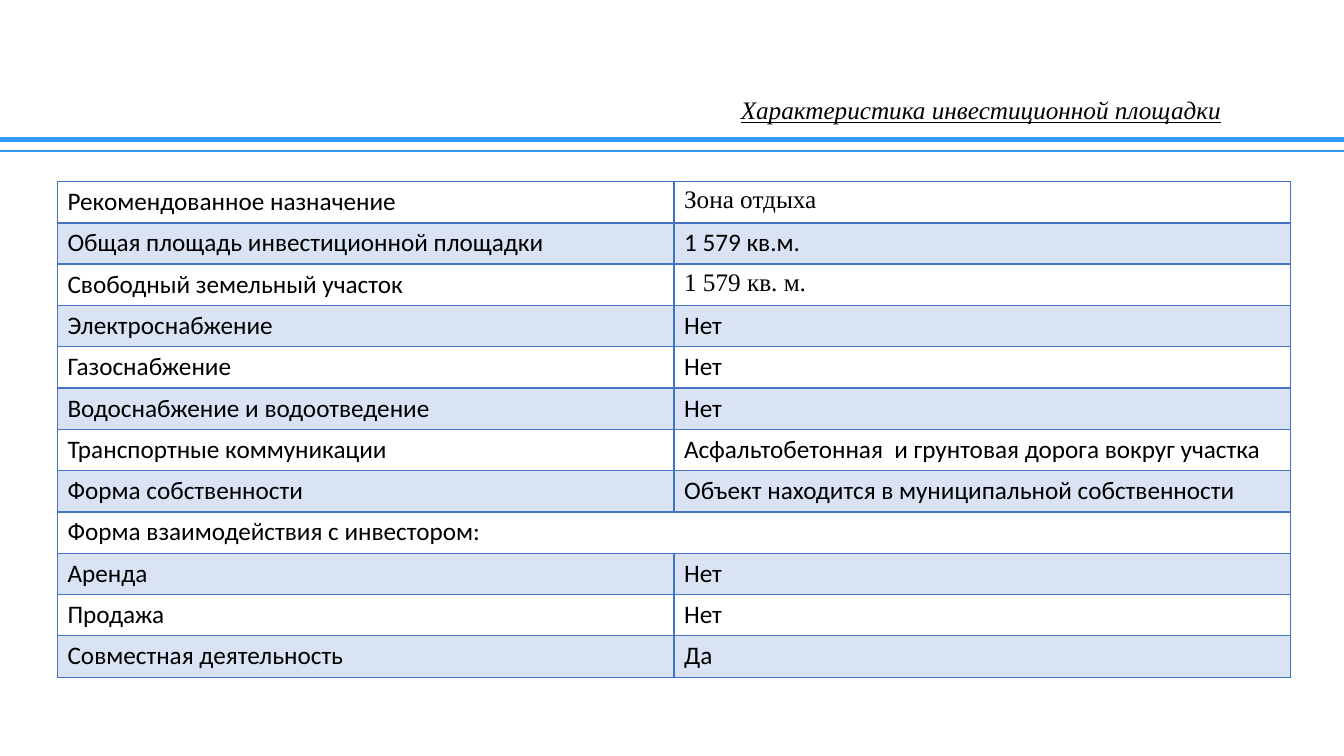
import pptx
import pptx.util
import pptx.dml.color
import pptx.enum.shapes
import pptx.enum.text
import pptx.oxml
import pptx.oxml.ns
import lxml.etree

Inches = pptx.util.Inches
BORDER = "4472C4"
BAND = "DAE3F3"
RULE = "3399FF"
SERIF = "Times New Roman"
SANS = "Calibri"


def color(hex_code):
    return pptx.dml.color.RGBColor.from_string(hex_code)


def write(frame, text, font=SANS, size=18, italic=False, underline=False, align="LEFT", spacing=1.0):
    paragraph = frame.paragraphs[0]
    paragraph.alignment = getattr(pptx.enum.text.PP_ALIGN, align)
    paragraph.line_spacing = spacing
    run = paragraph.add_run()
    run.text = text
    run.font.name = font
    run.font.size = pptx.util.Pt(size)
    run.font.bold = False
    run.font.italic = italic
    run.font.underline = underline
    run.font.color.rgb = color("000000")


presentation = pptx.Presentation()
presentation.slide_width = Inches(13.33)
presentation.slide_height = Inches(7.5)
slide = presentation.slides.add_slide(presentation.slide_layouts[6])

for top, width in [(1.38, 3.5), (1.5, 1.5)]:
    rule = slide.shapes.add_connector(
        pptx.enum.shapes.MSO_CONNECTOR.STRAIGHT, 0, Inches(top), presentation.slide_width, Inches(top))
    rule.line.color.rgb = color(RULE)
    rule.line.width = pptx.util.Pt(width)
    lxml.etree.SubElement(rule._element.spPr, pptx.oxml.ns.qn("a:effectLst"))

title = slide.shapes.add_textbox(presentation.slide_width // 2, Inches(0.97), Inches(6.13), Inches(0.27))
title.text_frame.word_wrap = True
title.text_frame.vertical_anchor = pptx.enum.text.MSO_ANCHOR.MIDDLE
write(title.text_frame, "Характеристика инвестиционной площадки",
      font=SERIF, italic=True, underline=True, align="CENTER", spacing=0.9)

rows = [
    ("Рекомендованное назначение", "Зона отдыха", SERIF),
    ("Общая площадь инвестиционной площадки", "1 579 кв.м.", SANS),
    ("Свободный земельный участок", "1 579 кв. м.", SERIF),
    ("Электроснабжение", "Нет", SANS),
    ("Газоснабжение", "Нет", SANS),
    ("Водоснабжение и водоотведение", "Нет", SANS),
    ("Транспортные коммуникации", "Асфальтобетонная  и грунтовая дорога вокруг участка", SANS),
    ("Форма собственности", "Объект находится в муниципальной собственности", SANS),
    ("Форма взаимодействия с инвестором:", None, SANS),
    ("Аренда", "Нет", SANS),
    ("Продажа", "Нет", SANS),
    ("Совместная деятельность", "Да", SANS),
]
row_height = 0.41
table = slide.shapes.add_table(
    len(rows), 2, Inches(0.57), Inches(1.8), Inches(12.23), Inches(row_height * len(rows))).table
table.first_row = False
table.horz_banding = False

for row_index, (label, value, value_font) in enumerate(rows):
    table.rows[row_index].height = Inches(row_height)
    for column_index, (text, font) in enumerate([(label, SANS), (value, value_font)]):
        cell = table.cell(row_index, column_index)
        properties = cell._tc.get_or_add_tcPr()
        for side in "LRTB":
            under_first = (row_index, side) in [(0, "B"), (1, "T")]
            border_width = pptx.util.Pt(2 if under_first else 1)
            properties.append(pptx.oxml.parse_xml(
                f'<a:ln{side} {pptx.oxml.ns.nsdecls("a")} w="{border_width}">'
                f'<a:solidFill><a:srgbClr val="{BORDER}"/></a:solidFill></a:ln{side}>'))
        if row_index % 2:
            cell.fill.solid()
            cell.fill.fore_color.rgb = color(BAND)
        else:
            cell.fill.background()
        if text:
            write(cell.text_frame, text, font=font)
    if value is None:
        table.cell(row_index, 0).merge(table.cell(row_index, 1))

presentation.save("out.pptx")
